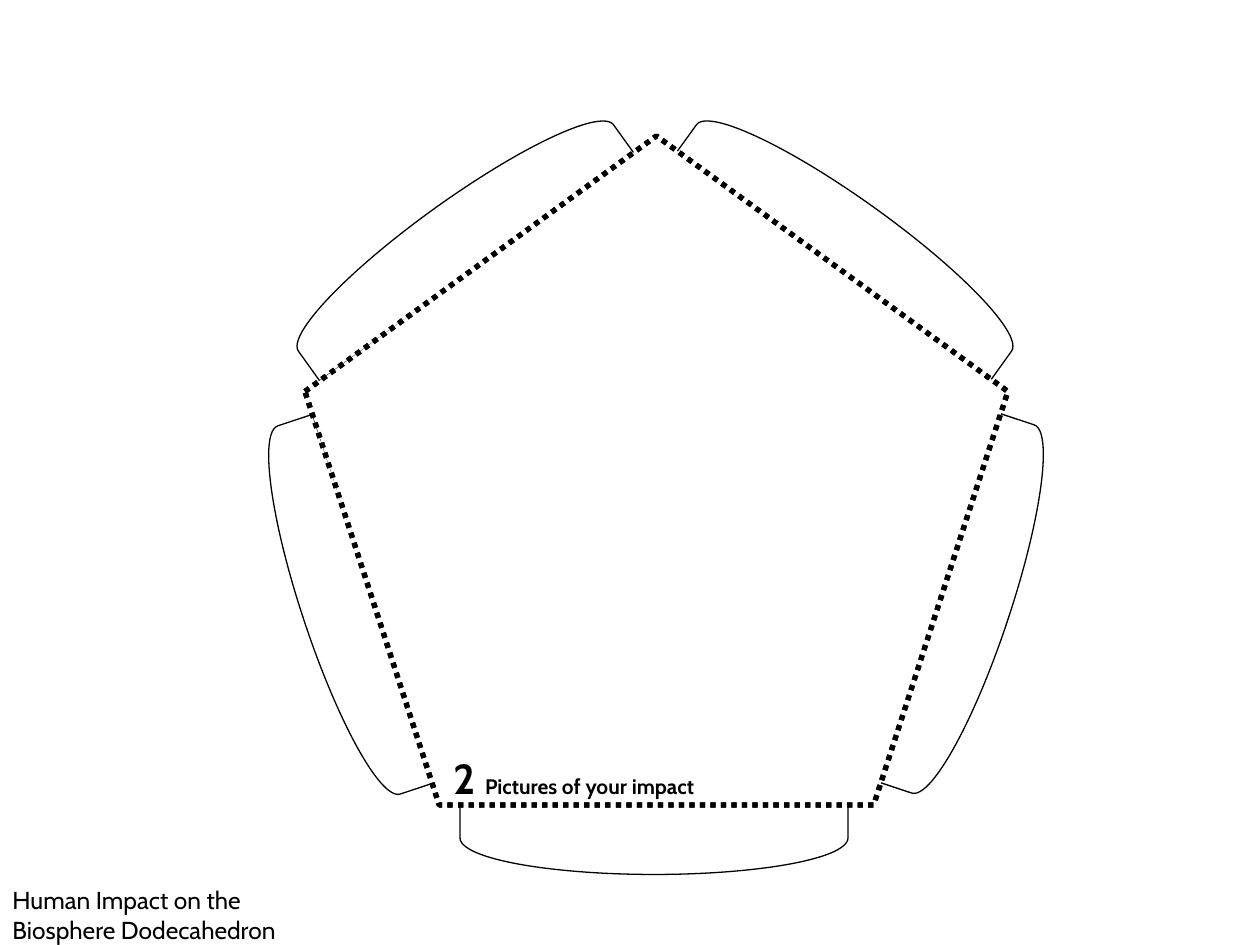
"""Build the cut-out dodecahedron face with five glue tabs."""
from pptx import Presentation
from pptx.dml.color import RGBColor
from pptx.enum.dml import MSO_LINE
from pptx.enum.shapes import MSO_SHAPE
from pptx.util import Pt

BLACK = RGBColor(0, 0, 0)
WHITE = RGBColor(255, 255, 255)
FONT = "Cabin"
PX = 914400 / 126
SLIDE_SIZE = (1260, 945)
FACE = (305, 136, 703, 669)
TAB_SIZE = (73, 388)
TABS = [  # centre x, centre y, rotation
    (973, 609, 18.4),
    (339, 610, 161.6),
    (854, 238, 305.7),
    (456, 238, 234.3),
    (654, 838, 90),
]
HEADING = [("2 ", 24), ("Pictures of your impact", 12)]
HEADING_BOX = (441, 746, 294, 63)
CAPTION = [("Human Impact on the Biosphere Dodecahedron", 14)]
CAPTION_BOX = (0, 879, 346, 66)


def emu(lengths):
    return [round(length * PX) for length in lengths]


def add_outline(slide, kind, box, width, fill=WHITE, dash=None, rotation=0):
    shape = slide.shapes.add_shape(kind, *emu(box))
    shape.shadow.inherit = False
    shape.rotation = rotation
    if fill is None:
        shape.fill.background()
    else:
        shape.fill.solid()
        shape.fill.fore_color.rgb = fill
    shape.line.color.rgb = BLACK
    shape.line.width = Pt(width)
    if dash is not None:
        shape.line.dash_style = dash


def add_text(slide, pieces, box, bold=False):
    frame = slide.shapes.add_textbox(*emu(box)).text_frame
    frame.word_wrap = True
    paragraph = frame.paragraphs[0]
    for text, size in pieces:
        run = paragraph.add_run()
        run.text = text
        run.font.name = FONT
        run.font.size = Pt(size)
        run.font.bold = bold
        run.font.color.rgb = BLACK


def add_face(slide, fill):
    add_outline(slide, MSO_SHAPE.REGULAR_PENTAGON, FACE, 3, fill=fill,
                dash=MSO_LINE.ROUND_DOT)


def main():
    presentation = Presentation()
    presentation.slide_width, presentation.slide_height = emu(SLIDE_SIZE)
    slide = presentation.slides.add_slide(presentation.slide_layouts[6])
    width, height = TAB_SIZE
    for x, y, rotation in TABS:
        box = (x - width / 2, y - height / 2, width, height)
        add_outline(slide, MSO_SHAPE.FLOWCHART_DELAY, box, 0.75, rotation=rotation)
    add_face(slide, WHITE)
    add_text(slide, HEADING, HEADING_BOX, bold=True)
    add_face(slide, None)
    add_text(slide, CAPTION, CAPTION_BOX)
    presentation.save("out.pptx")


if __name__ == "__main__":
    main()
